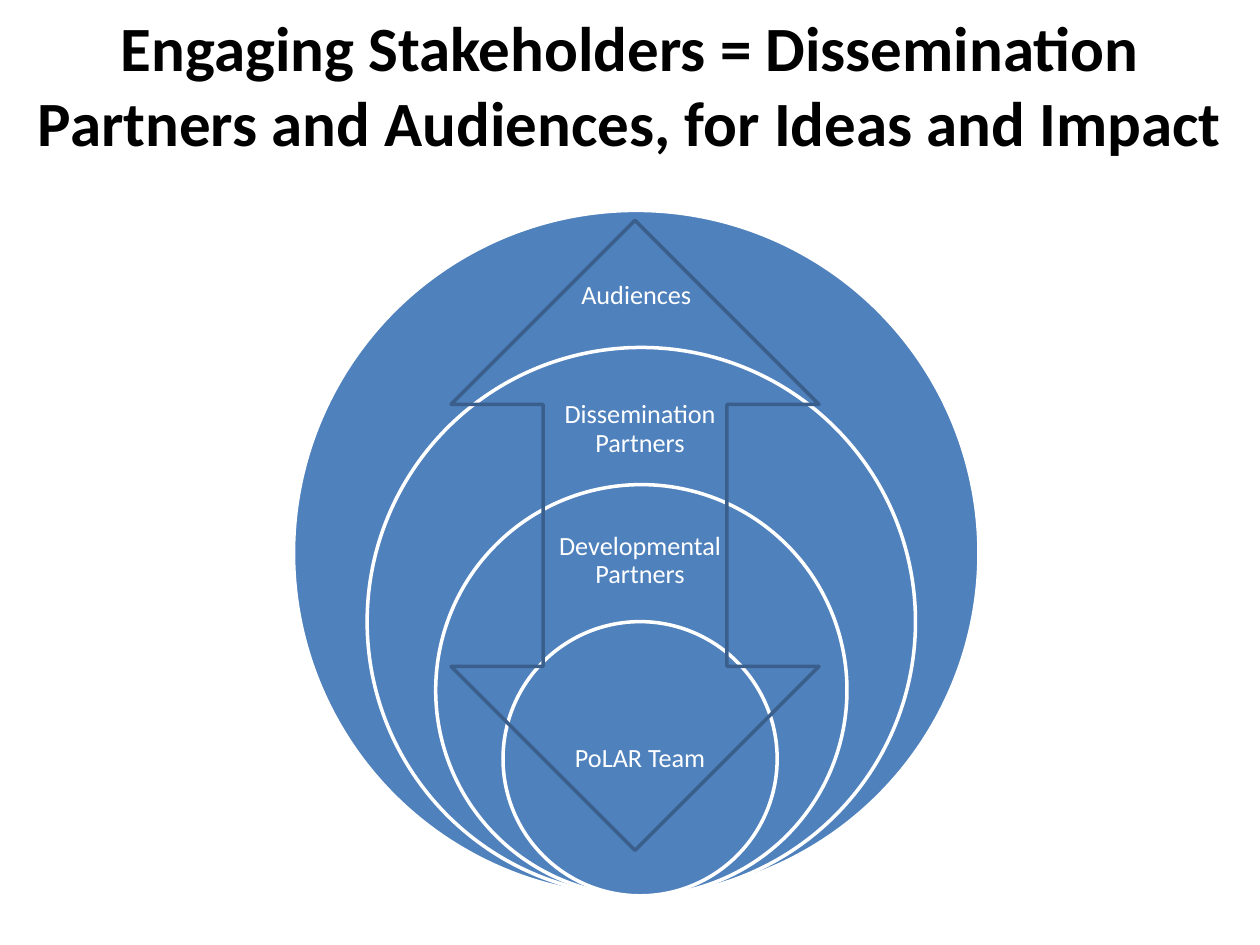
"""Build a slide of nested stakeholder circles crossed by a two-way arrow."""
from dataclasses import dataclass

from pptx import Presentation
from pptx.dml.color import RGBColor
from pptx.enum.shapes import MSO_SHAPE
from pptx.enum.text import MSO_ANCHOR, PP_ALIGN
from pptx.util import Inches, Pt

FONT = "Calibri"
BLUE, NAVY, WHITE, BLACK = "4F81BD", "3A5F8C", "FFFFFF", "000000"
OUTER_DIAMETER = 5.44
CIRCLES_BOTTOM = 7.11
LABEL_WIDTH = 1.52


@dataclass(frozen=True)
class Ring:
    """A circle of stakeholders and the place of its label."""
    label: str
    scale: float
    center_x: float
    label_x: float
    label_top: float
    label_height: float


RINGS = [
    Ring("Audiences", 1.0, 5.05, 5.05, 1.94, 0.82),
    Ring("Dissemination Partners", 0.8, 5.09, 5.08, 3.02, 0.78),
    Ring("Developmental Partners", 0.6, 5.09, 5.08, 4.09, 0.73),
    Ring("PoLAR Team", 0.4, 5.08, 5.08, 5.48, 1.09),
]


def color(value: str) -> RGBColor:
    """Turn a hex string into a colour."""
    return RGBColor.from_string(value)


def add_text(slide, text: str, left: float, top: float, width: float, height: float,
             size: float, ink: str, bold: bool = False, inset: float = 0.1,
             spacing: float = 1.0) -> None:
    """Add centred, wrapped text in the middle of a box."""
    frame = slide.shapes.add_textbox(
        Inches(left), Inches(top), Inches(width), Inches(height)).text_frame
    frame.word_wrap = True
    frame.vertical_anchor = MSO_ANCHOR.MIDDLE
    frame.margin_left = frame.margin_right = Inches(inset)
    frame.margin_top = frame.margin_bottom = Inches(inset)
    paragraph = frame.paragraphs[0]
    paragraph.text = text
    paragraph.alignment = PP_ALIGN.CENTER
    paragraph.line_spacing = spacing
    paragraph.font.name = FONT
    paragraph.font.size = Pt(size)
    paragraph.font.bold = bold
    paragraph.font.color.rgb = color(ink)


def add_outlined(slide, kind: MSO_SHAPE, left: float, top: float, width: float,
                 height: float, line: str, fill: str | None = None) -> None:
    """Add a preset shape with a two-point outline and an optional fill."""
    shape = slide.shapes.add_shape(
        kind, Inches(left), Inches(top), Inches(width), Inches(height))
    shape.shadow.inherit = False
    if fill:
        shape.fill.solid()
        shape.fill.fore_color.rgb = color(fill)
    else:
        shape.fill.background()
    shape.line.color.rgb = color(line)
    shape.line.width = Pt(2)


def add_ring(slide, ring: Ring) -> None:
    """Draw a circle resting on the shared bottom, with its label."""
    diameter = OUTER_DIAMETER * ring.scale
    add_outlined(slide, MSO_SHAPE.OVAL, ring.center_x - diameter / 2,
                 CIRCLES_BOTTOM - diameter, diameter, diameter, WHITE, BLUE)
    add_text(slide, ring.label, ring.label_x - LABEL_WIDTH / 2, ring.label_top,
             LABEL_WIDTH, ring.label_height, 15, WHITE, inset=0.08, spacing=0.9)


def main() -> None:
    """Build and save the slide."""
    presentation = Presentation()
    presentation.slide_width, presentation.slide_height = Inches(10), Inches(7.5)
    slide = presentation.slides.add_slide(presentation.slide_layouts[6])
    add_text(slide, "Engaging Stakeholders = Dissemination Partners and Audiences, "
             "for Ideas and Impact", 0, 0, 10, 1.33, 36, BLACK, bold=True)
    for ring in RINGS:
        add_ring(slide, ring)
    add_outlined(slide, MSO_SHAPE.UP_DOWN_ARROW, 3.58, 1.75, 2.92, 5, NAVY)
    presentation.save("out.pptx")


if __name__ == "__main__":
    main()
